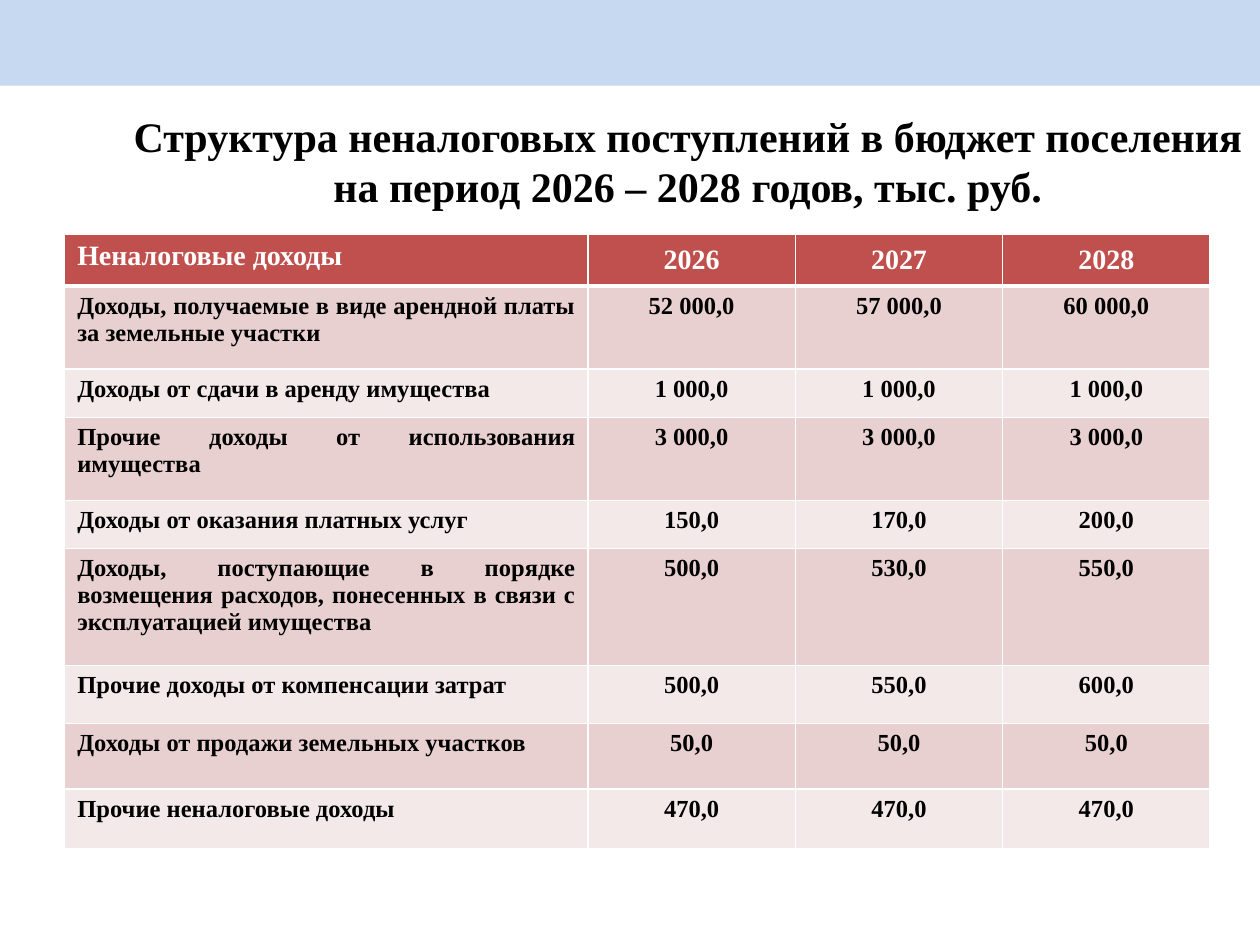
from lxml import etree
from pptx import Presentation
from pptx.dml.color import RGBColor
from pptx.enum import shapes, text
from pptx.oxml import ns
from pptx.util import Pt

HEADING = "Структура неналоговых поступлений в бюджет поселения на период 2026 – 2028 годов, тыс. руб."
YEARS = ("Неналоговые доходы", "2026", "2027", "2028")
INCOME = [
    ("Доходы, получаемые в виде арендной платы за земельные участки", "52 000,0", "57 000,0", "60 000,0"),
    ("Доходы от сдачи в аренду имущества", "1 000,0", "1 000,0", "1 000,0"),
    ("Прочие доходы от использования имущества", "3 000,0", "3 000,0", "3 000,0"),
    ("Доходы от оказания платных услуг", "150,0", "170,0", "200,0"),
    ("Доходы, поступающие в порядке возмещения расходов, понесенных в связи с эксплуатацией имущества",
     "500,0", "530,0", "550,0"),
    ("Прочие доходы от компенсации затрат", "500,0", "550,0", "600,0"),
    ("Доходы от продажи земельных участков", "50,0", "50,0", "50,0"),
    ("Прочие неналоговые доходы", "470,0", "470,0", "470,0"),
]
COLUMN_WIDTHS = (299, 118.5, 118.5, 118.5)
ROW_HEIGHTS = (29.5, 47.5, 27.5, 47.5, 27.5, 67, 33, 37.5, 34)
COLORS = {
    "band": "C6D9F1", "header": "C0504D", "odd": "E8D0D0", "even": "F4E9E9",
    "black": "000000", "white": "FFFFFF",
}
ALIGN = text.PP_ALIGN
ANCHOR = text.MSO_ANCHOR


def paint(fill, color):
    fill.solid()
    fill.fore_color.rgb = RGBColor.from_string(COLORS[color])


def write(frame, wording, size=14, color="black", align=ALIGN.CENTER, anchor=ANCHOR.TOP):
    frame.word_wrap = True
    frame.vertical_anchor = anchor
    paragraph = frame.paragraphs[0]
    paragraph.alignment = align
    run = paragraph.add_run()
    run.text = wording
    run.font.name = "Times New Roman"
    run.font.size = Pt(size)
    run.font.bold = True
    run.font.color.rgb = RGBColor.from_string(COLORS[color])


def add_border(cell, side, width):
    properties = cell._tc.get_or_add_tcPr()
    line = etree.SubElement(properties, ns.qn(f"a:ln{side}"), w=str(Pt(width)))
    solid = etree.SubElement(line, ns.qn("a:solidFill"))
    etree.SubElement(solid, ns.qn("a:srgbClr"), val=COLORS["white"])


def fill_cell(cell, row, column, wording):
    header = row == 0
    for side in "LRTB":
        under_header = (row, side) in ((0, "B"), (1, "T"))
        add_border(cell, side, 3 if under_header else 1)
    paint(cell.fill, "header" if header else "odd" if row % 2 else "even")
    if column:
        align = ALIGN.CENTER
    else:
        align = ALIGN.LEFT if header else ALIGN.JUSTIFY
    write(cell.text_frame, wording, size=16 if header else 14,
          color="white" if header else "black", align=align)
    cell.vertical_anchor = ANCHOR.MIDDLE if header and column else ANCHOR.TOP


def add_income_table(slide):
    rows = [YEARS, *INCOME]
    table = slide.shapes.add_table(
        len(rows), len(YEARS), Pt(37), Pt(134),
        Pt(sum(COLUMN_WIDTHS)), Pt(sum(ROW_HEIGHTS))).table
    for column, width in zip(table.columns, COLUMN_WIDTHS):
        column.width = Pt(width)
    for row, height in zip(table.rows, ROW_HEIGHTS):
        row.height = Pt(height)
    for r, values in enumerate(rows):
        for c, value in enumerate(values):
            fill_cell(table.cell(r, c), r, c, value)


def main():
    deck = Presentation()
    deck.slide_width, deck.slide_height = Pt(720), Pt(540)
    slide = deck.slides.add_slide(deck.slide_layouts[5])

    band = slide.shapes.add_shape(shapes.MSO_SHAPE.RECTANGLE, 0, 0, deck.slide_width, Pt(49))
    band.shadow.inherit = False
    paint(band.fill, "band")
    band.line.fill.background()

    heading = slide.shapes.title
    heading.left, heading.top, heading.width, heading.height = Pt(69), Pt(60.5), Pt(648), Pt(63)
    frame = heading.text_frame
    frame.auto_size = text.MSO_AUTO_SIZE.NONE
    frame.margin_left = frame.margin_right = 0
    write(frame, HEADING, size=24, anchor=ANCHOR.MIDDLE)

    add_income_table(slide)
    deck.save("out.pptx")


if __name__ == "__main__":
    main()
